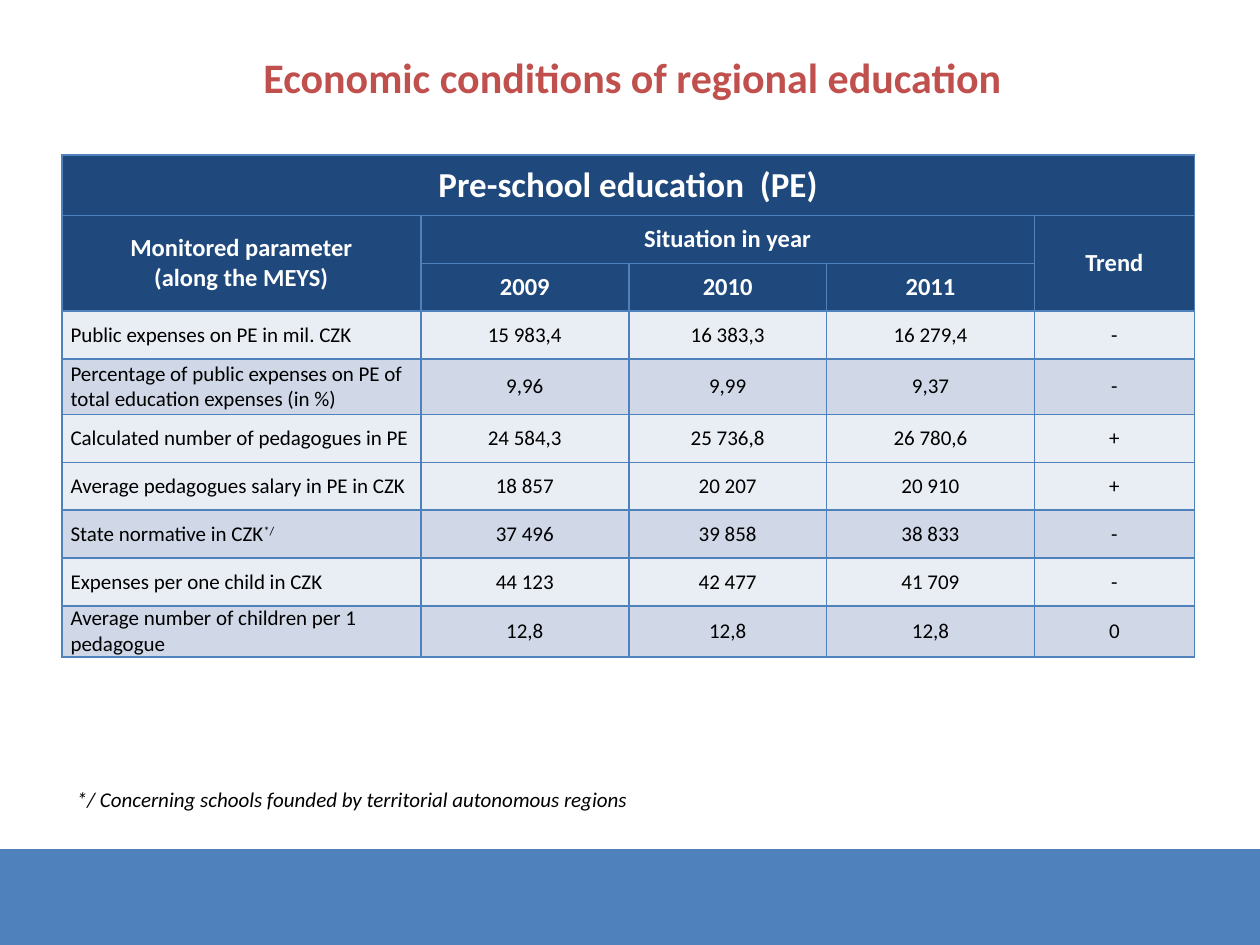
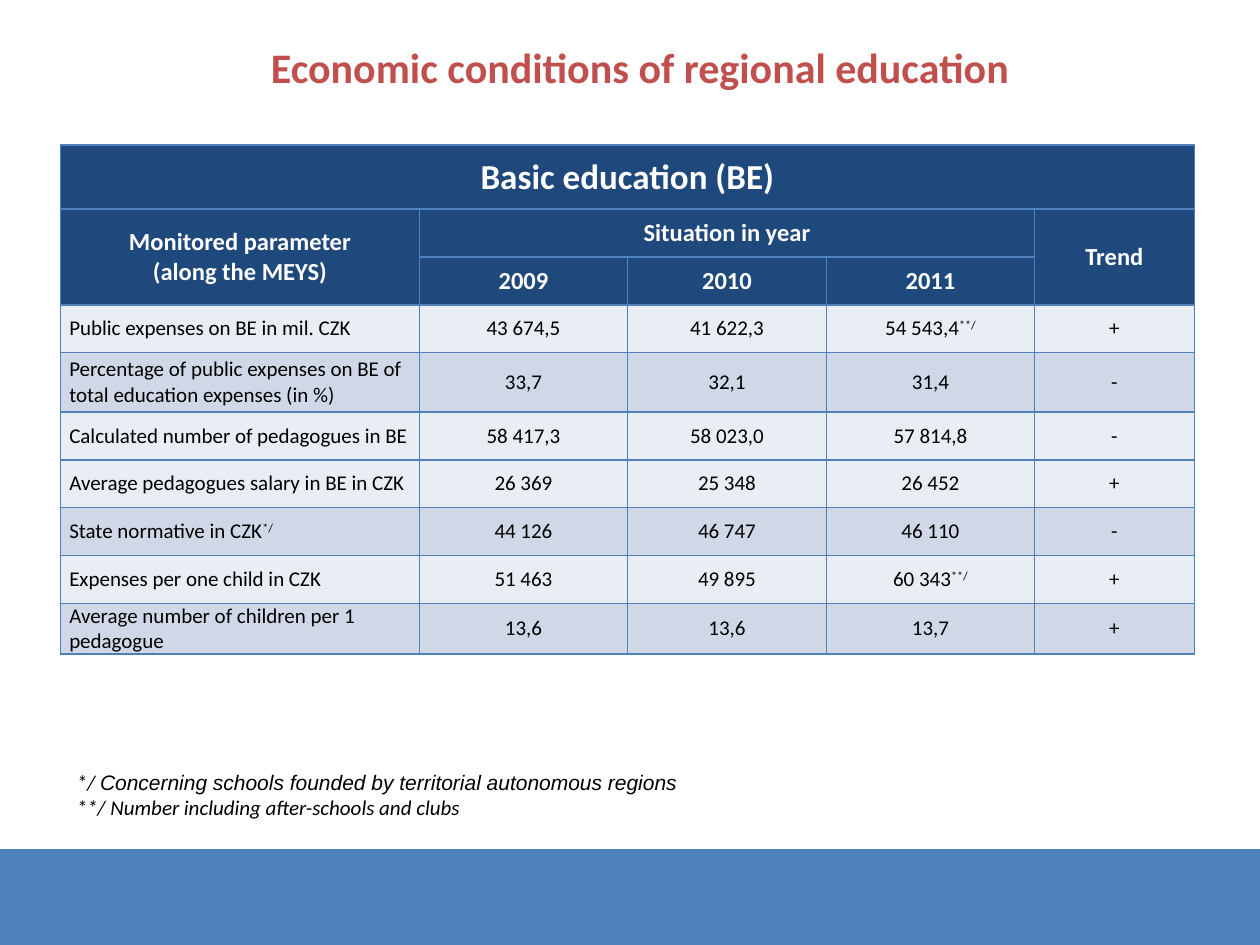
"""Build two slides on the economic conditions of regional education."""
from lxml.etree import SubElement
from pptx import Presentation
from pptx.dml.color import RGBColor
from pptx.enum.shapes import MSO_SHAPE
from pptx.enum.text import MSO_ANCHOR, PP_ALIGN
from pptx.oxml.ns import qn
from pptx.util import Inches, Pt

COLORS = {
    "band": "4F81BD", "title": "C0504D", "header": "1F497D", "light": "E9EDF4",
    "dark": "D0D8E8", "white": "FFFFFF", "black": "000000",
}
FONT = "Calibri"
TITLE = "Economic conditions of regional education"
HEADER = [
    ["Monitored parameter\n(along the MEYS)", "Situation in year", "", "", "Trend"],
    ["", "2009", "2010", "2011", ""],
]
MERGES = [(0, 0, 0, 4), (1, 0, 2, 0), (1, 1, 1, 3), (1, 4, 2, 4)]
PARAMETERS = [
    ("Public expenses on {} in mil. CZK", "light"),
    ("Percentage of public expenses on {} of total education expenses (in %)", "dark"),
    ("Calculated number of pedagogues in {}", "light"),
    ("Average pedagogues salary in {} in CZK", "light"),
    ("State normative in CZK^*/", "dark"),
    ("Expenses per one child in CZK", "light"),
    ("Average number of children per 1 pedagogue", "dark"),
]
SLIDES = [
    {
        "heading": "Pre-school education  (PE)", "level": "PE",
        "title_at": (0.14, 0.36, 9.76, 0.5),
        "table_at": (0.49, 1.23), "year_width": 1.57,
        "heading_height": 0.48, "tall_height": 0.44,
        "notes_at": (0.51, 6.19, 8.98, 0.3),
        "notes": [[("*/ Concerning schools founded by territorial autonomous regions", FONT)]],
        "values": [
            ("15 983,4", "16 383,3", "16 279,4", "-"),
            ("9,96", "9,99", "9,37", "-"),
            ("24 584,3", "25 736,8", "26 780,6", "+"),
            ("18 857", "20 207", "20 910", "+"),
            ("37 496", "39 858", "38 833", "-"),
            ("44 123", "42 477", "41 709", "-"),
            ("12,8", "12,8", "12,8", "0"),
        ],
    },
    {
        "heading": "Basic education (BE)", "level": "BE",
        "title_at": (0.2, 0.28, 9.76, 0.51),
        "table_at": (0.48, 1.15), "year_width": 1.58,
        "heading_height": 0.51, "tall_height": 0.47,
        "notes_at": (0.51, 6.06, 8.98, 0.51),
        "notes": [
            [("*/ ", FONT),
             ("Concerning schools founded by territorial autonomous regions", "Arial")],
            [("**/ Number including after-schools and clubs", FONT)],
        ],
        "values": [
            ("43 674,5", "41 622,3", "54 543,4^**/", "+"),
            ("33,7", "32,1", "31,4", "-"),
            ("58 417,3", "58 023,0", "57 814,8", "-"),
            ("26 369", "25 348", "26 452", "+"),
            ("44 126", "46 747", "46 110", "-"),
            ("51 463", "49 895", "60 343^**/", "+"),
            ("13,6", "13,6", "13,7", "+"),
        ],
    },
]


class Deck:
    """Hold the shared style and the slide being built."""

    def __init__(self):
        self.prs = Presentation()
        self.prs.slide_width = Inches(10)
        self.prs.slide_height = Inches(7.5)
        self.slide = None

    def new_slide(self):
        self.slide = self.prs.slides.add_slide(self.prs.slide_layouts[6])
        sp = self.slide.shapes.add_shape(
            MSO_SHAPE.RECTANGLE, 0, Inches(6.74), Inches(10), Inches(0.76))
        sp.shadow.inherit = False
        sp.fill.solid()
        sp.fill.fore_color.rgb = self.color("band")
        sp.line.fill.background()

    def color(self, name):
        return RGBColor.from_string(COLORS[name])

    def fill_text(self, tf, lines, size, color, bold=False, italic=False, align=PP_ALIGN.LEFT):
        tf.word_wrap = True
        for i, line in enumerate(lines):
            p = tf.add_paragraph() if i else tf.paragraphs[0]
            p.alignment = align
            for text, font in line:
                for j, part in enumerate(text.split("^")):
                    r = p.add_run()
                    r.text = part
                    r.font.name = font
                    r.font.size = Pt(size)
                    r.font.bold = bold
                    r.font.italic = italic
                    r.font.color.rgb = self.color(color)
                    if j:
                        r._r.get_or_add_rPr().set("baseline", "30000")

    def text(self, at, lines, size, color, **style):
        sp = self.slide.shapes.add_textbox(*map(Inches, at))
        self.fill_text(sp.text_frame, lines, size, color, **style)

    def borders(self, cell):
        tc_pr = cell._tc.get_or_add_tcPr()
        for side in ("lnL", "lnR", "lnT", "lnB"):
            ln = SubElement(tc_pr, qn(f"a:{side}"), w=str(Pt(1)))
            fill = SubElement(ln, qn("a:solidFill"))
            SubElement(fill, qn("a:srgbClr"), val=COLORS["band"])

    def cell(self, cell, text, fill, size, color, bold, align):
        self.borders(cell)
        cell.fill.solid()
        cell.fill.fore_color.rgb = self.color(fill)
        cell.vertical_anchor = MSO_ANCHOR.MIDDLE
        if text:
            lines = [[(line, FONT)] for line in text.split("\n")]
            self.fill_text(cell.text_frame, lines, size, color, bold=bold, align=align)

    def table(self, at, widths, heights, rows, fills):
        left, top = at
        shape = self.slide.shapes.add_table(
            len(rows), len(widths), *map(Inches, (left, top, sum(widths), sum(heights))))
        table = shape.table
        table.first_row = table.horz_banding = False
        for column, width in zip(table.columns, widths):
            column.width = Inches(width)
        for i, (row, fill) in enumerate(zip(rows, fills)):
            table.rows[i].height = Inches(heights[i])
            header = fill == "header"
            size = 20 if i == 0 else 14 if header else 12
            color = "white" if header else "black"
            for j, text in enumerate(row):
                c = table.cell(i, j)
                if i:
                    c.margin_left = c.margin_right = Inches(0.07)
                    c.margin_top = c.margin_bottom = 0
                align = PP_ALIGN.CENTER if header or j else PP_ALIGN.LEFT
                self.cell(c, text, fill, size, color, header, align)
        for r1, c1, r2, c2 in MERGES:
            table.cell(r1, c1).merge(table.cell(r2, c2))


def main():
    deck = Deck()
    for data in SLIDES:
        deck.new_slide()
        rows = [[data["heading"], "", "", "", ""], *HEADER]
        rows += [[label.format(data["level"]), *values]
                 for (label, _), values in zip(PARAMETERS, data["values"])]
        fills = ["header"] * 3 + [fill for _, fill in PARAMETERS]
        heights = [data["heading_height"]] + [0.38] * 9
        heights[4] = data["tall_height"]
        widths = [2.85, 1.65, data["year_width"], 1.65, 1.27]
        deck.table(data["table_at"], widths, heights, rows, fills)
        deck.text(data["title_at"], [[(TITLE, FONT)]], 24, "title",
                  bold=True, align=PP_ALIGN.CENTER)
        deck.text(data["notes_at"], data["notes"], 12, "black", italic=True)
    deck.prs.save("out.pptx")


if __name__ == "__main__":
    main()
